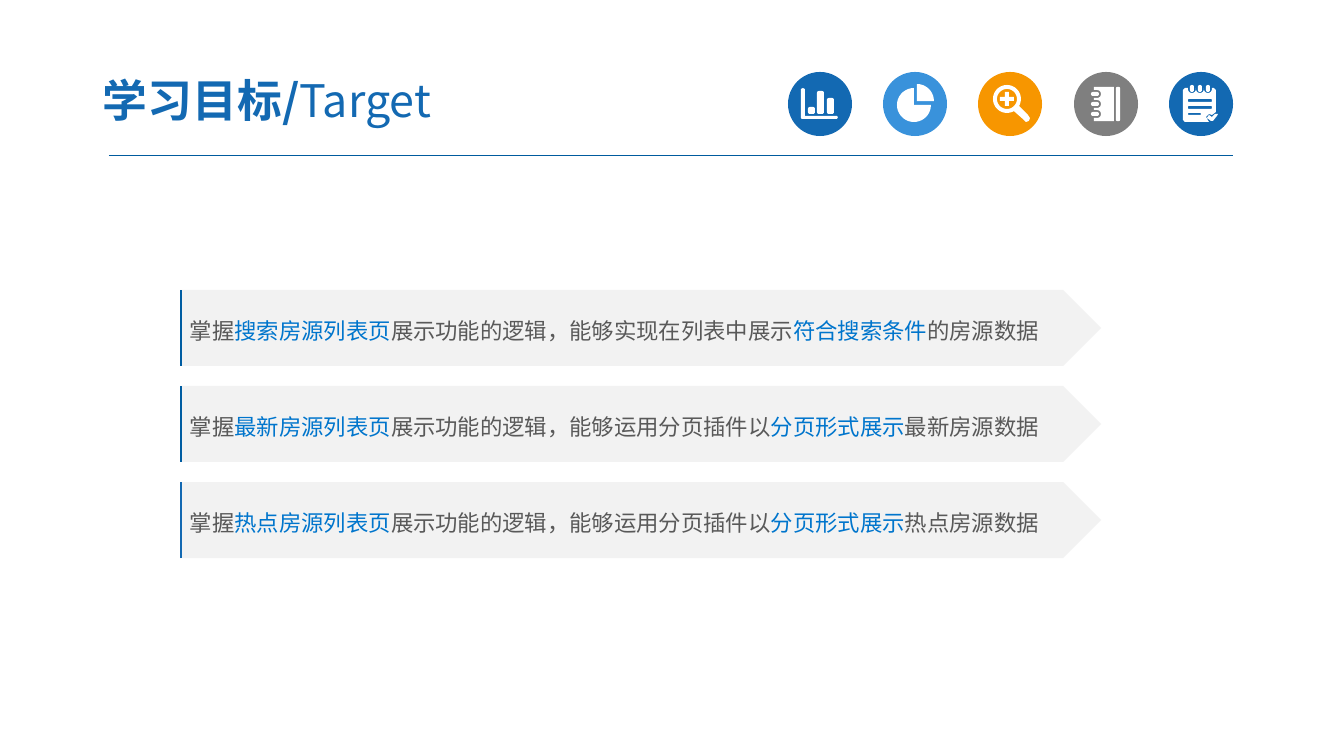
import math

from lxml import etree
from pptx import Presentation
from pptx import util as u
from pptx.dml.color import RGBColor
from pptx.enum import shapes, text
from pptx.oxml.ns import qn

PX = 9071  # EMU in one px, at 100.8 px to the inch
FONT = "Noto Sans CJK SC"
BLUE = RGBColor(0x13, 0x69, 0xB2)
SKY = RGBColor(0x39, 0x92, 0xDB)
ORANGE = RGBColor(0xF7, 0x96, 0x00)
GREY = RGBColor(0x7F, 0x7F, 0x7F)
WHITE = RGBColor(0xFF, 0xFF, 0xFF)
PALE = RGBColor(0xF2, 0xF2, 0xF2)
BODY = RGBColor(0x59, 0x59, 0x59)
KEYWORD = RGBColor(0x00, 0x75, 0xCC)
RULE = RGBColor(0x00, 0x5B, 0x9E)
EDGE = RGBColor(0x00, 0x5D, 0xA2)


def arc(x, y, radius, start, end):
    """Points on a circle round (x, y), in degrees clockwise from the right."""
    steps = max(4, abs(end - start) // 10)
    angles = [math.radians(start + (end - start) * i / steps) for i in range(steps + 1)]
    return [(x + radius * math.cos(a), y + radius * math.sin(a)) for a in angles]


def rounded(left, top, right, bottom, radius):
    """Points of a rectangle with rounded corners."""
    return (arc(right - radius, bottom - radius, radius, 0, 90)
            + arc(left + radius, bottom - radius, radius, 90, 180)
            + arc(left + radius, top + radius, radius, 180, 270)
            + arc(right - radius, top + radius, radius, 270, 360))


presentation = Presentation()
presentation.slide_width = 1344 * PX
presentation.slide_height = 756 * PX
slide = presentation.slides.add_slide(presentation.slide_layouts[6])

# Icon outlines, in px from the top left of each circle
bar_chart = [
    [(13, 17), (15, 16), (17, 17), (17, 44), (49, 44), (50, 45), (49, 47), (14, 47), (13, 46)],
    rounded(20, 35, 27, 42, 2),
    rounded(29, 19, 36, 42, 2),
    rounded(39, 26, 46, 42, 2),
]
pie_chart = [
    [(34, 29)] + arc(34, 29, 17, 270, 360),
    [(31, 33)] + arc(31, 33, 17, 0, 270),
]
magnifier = [
    arc(29, 27, 14, 60, 390) + [(50, 43), (52, 46), (51, 49), (48, 50), (46, 48)],
    arc(29, 27, 10, 360, 0),
    [(27, 20), (31, 20), (31, 25), (36, 25), (36, 29), (31, 29),
     (31, 34), (27, 34), (27, 29), (22, 29), (22, 25), (27, 25)],
]
cover = [(20, 15), (40, 15), (40, 49), (20, 49)]
notebook = [cover, rounded(42, 15, 46, 49, 1)]
for y in (42, 32, 22):
    cover += [(20, y + 4)] + arc(23, y, 4, 90, -90) + [(20, y - 4)]
    notebook.append(rounded(17, y - 2, 25, y + 2, 2))
page = [(47, 40), (43, 43), (40, 42), (37, 45), (40, 50), (16, 50), (14, 48), (14, 18), (16, 16)]
notepad = [
    page,
    [(48, 44), (44, 49), (42, 49), (38, 46), (40, 43), (43, 45), (46, 42), (49, 42)],
    rounded(19, 27, 43, 30, 1),
    rounded(19, 34, 43, 37, 1),
    rounded(19, 41, 32, 43, 1),
]
for x in (23, 31, 39):
    page += [(x - 4, 16)] + arc(x, 17, 4, 180, 0) + [(x + 4, 16)]
    notepad.append(rounded(x - 2, 13, x + 2, 20, 2))
page += [(45, 16), (47, 18)]

icons = [(BLUE, bar_chart), (SKY, pie_chart), (ORANGE, magnifier),
         (GREY, notebook), (BLUE, notepad)]
for index, (colour, outlines) in enumerate(icons):
    left, top = round(788 + 95.25 * index), 72
    circle = slide.shapes.add_shape(
        shapes.MSO_SHAPE.OVAL, left * PX, top * PX, 64 * PX, 64 * PX)
    builder = None
    for outline in outlines:
        points = [((left + x) * PX, (top + y) * PX) for x, y in outline]
        if builder is None:
            builder = slide.shapes.build_freeform(*points[0])
        else:
            builder.move_to(*points[0])
        builder.add_line_segments(points[1:], close=True)
    symbol = builder.convert_to_shape()
    for shape, fill in ((circle, colour), (symbol, WHITE)):
        shape.shadow.inherit = False
        shape.fill.solid()
        shape.fill.fore_color.rgb = fill
        shape.line.fill.background()

# Title
title = slide.shapes.add_textbox(90 * PX, 64 * PX, 526 * PX, 72 * PX)
frame = title.text_frame
frame.word_wrap = True
frame.vertical_anchor = text.MSO_ANCHOR.MIDDLE
frame.margin_left = frame.margin_right = 13 * PX
frame.margin_top = frame.margin_bottom = 7 * PX
heading = frame.paragraphs[0]
runs = [(heading, "学习目标/", 32, BLUE, True), (heading, "Target", 32, BLUE, False)]

# Goals: plain and highlighted words take turns
goals = [
    ("掌握", "搜索房源列表页", "展示功能的逻辑，能够实现在列表中展示", "符合搜索条件", "的房源数据"),
    ("掌握", "最新房源列表页", "展示功能的逻辑，能够运用分页插件以", "分页形式展示", "最新房源数据"),
    ("掌握", "热点房源列表页", "展示功能的逻辑，能够运用分页插件以", "分页形式展示", "热点房源数据"),
]
lines = [(109, 156, 1233, 156, RULE, 0.75)]
for index, (goal, edge) in enumerate(zip(goals, (EDGE, EDGE, BLUE))):
    top = 290 + 96 * index
    banner = slide.shapes.add_shape(
        shapes.MSO_SHAPE.PENTAGON, 180 * PX, top * PX, 921 * PX, 76 * PX)
    banner.shadow.inherit = False
    banner.fill.solid()
    banner.fill.fore_color.rgb = PALE
    banner.line.fill.background()
    banner.text_frame.vertical_anchor = text.MSO_ANCHOR.MIDDLE
    paragraph = banner.text_frame.paragraphs[0]
    paragraph.alignment = text.PP_ALIGN.LEFT
    paragraph.line_spacing = 1.2
    for part, words in enumerate(goal):
        runs.append((paragraph, words, 16, KEYWORD if part % 2 else BODY, False))
    lines.append((181, top + 76, 181, top, edge, 1.5))

for paragraph, words, size, colour, bold in runs:
    run = paragraph.add_run()
    run.text = words
    run.font.name = FONT
    run.font.size = u.Pt(size)
    run.font.bold = bold
    run.font.color.rgb = colour
    east_asian = etree.SubElement(run.font._element, qn("a:ea"))
    east_asian.set("typeface", FONT)

for x1, y1, x2, y2, colour, width in lines:
    line = slide.shapes.add_connector(
        shapes.MSO_CONNECTOR.STRAIGHT, x1 * PX, y1 * PX, x2 * PX, y2 * PX)
    line.line.color.rgb = colour
    line.line.width = u.Pt(width)
    etree.SubElement(line._element.spPr, qn("a:effectLst"))

presentation.save("out.pptx")
